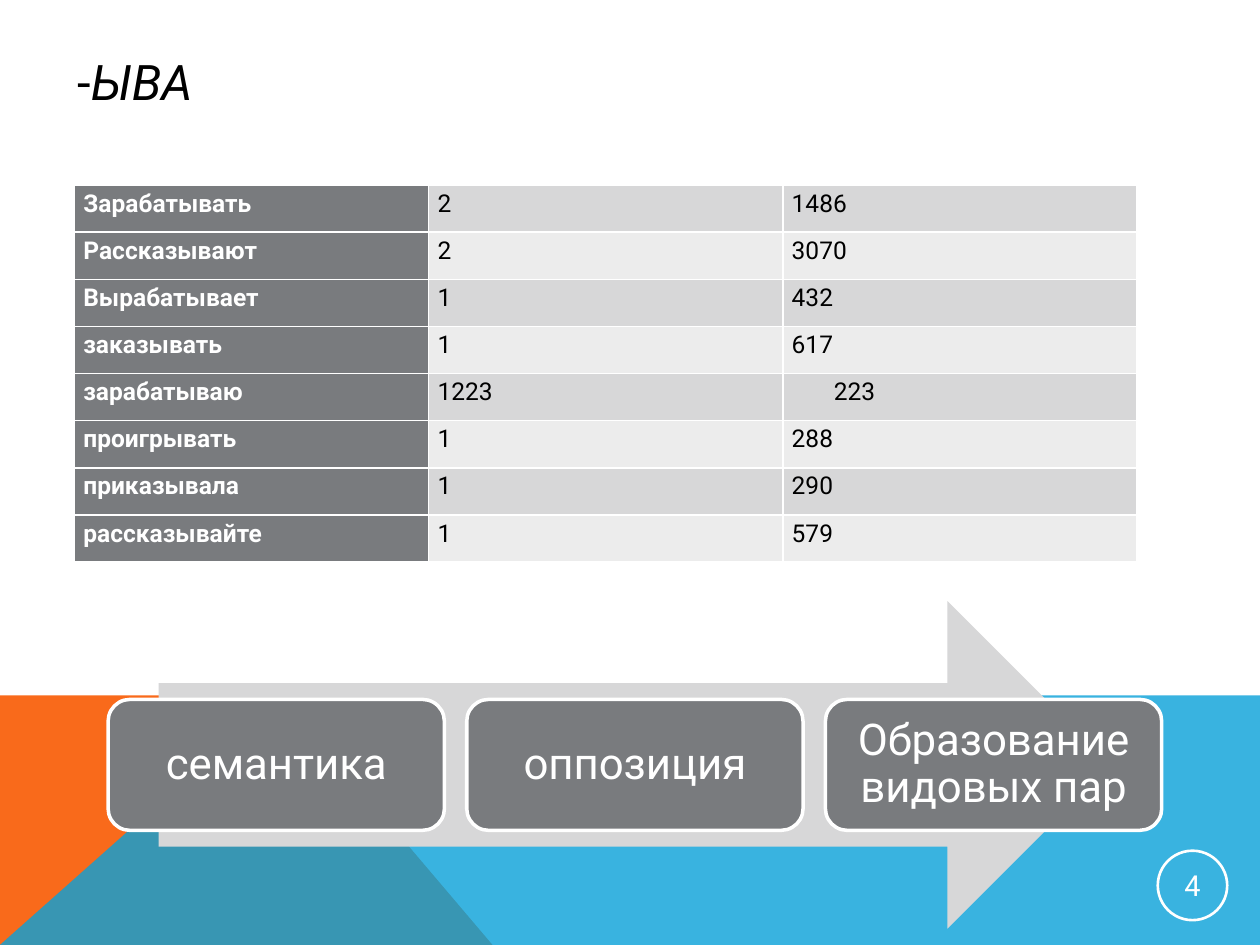
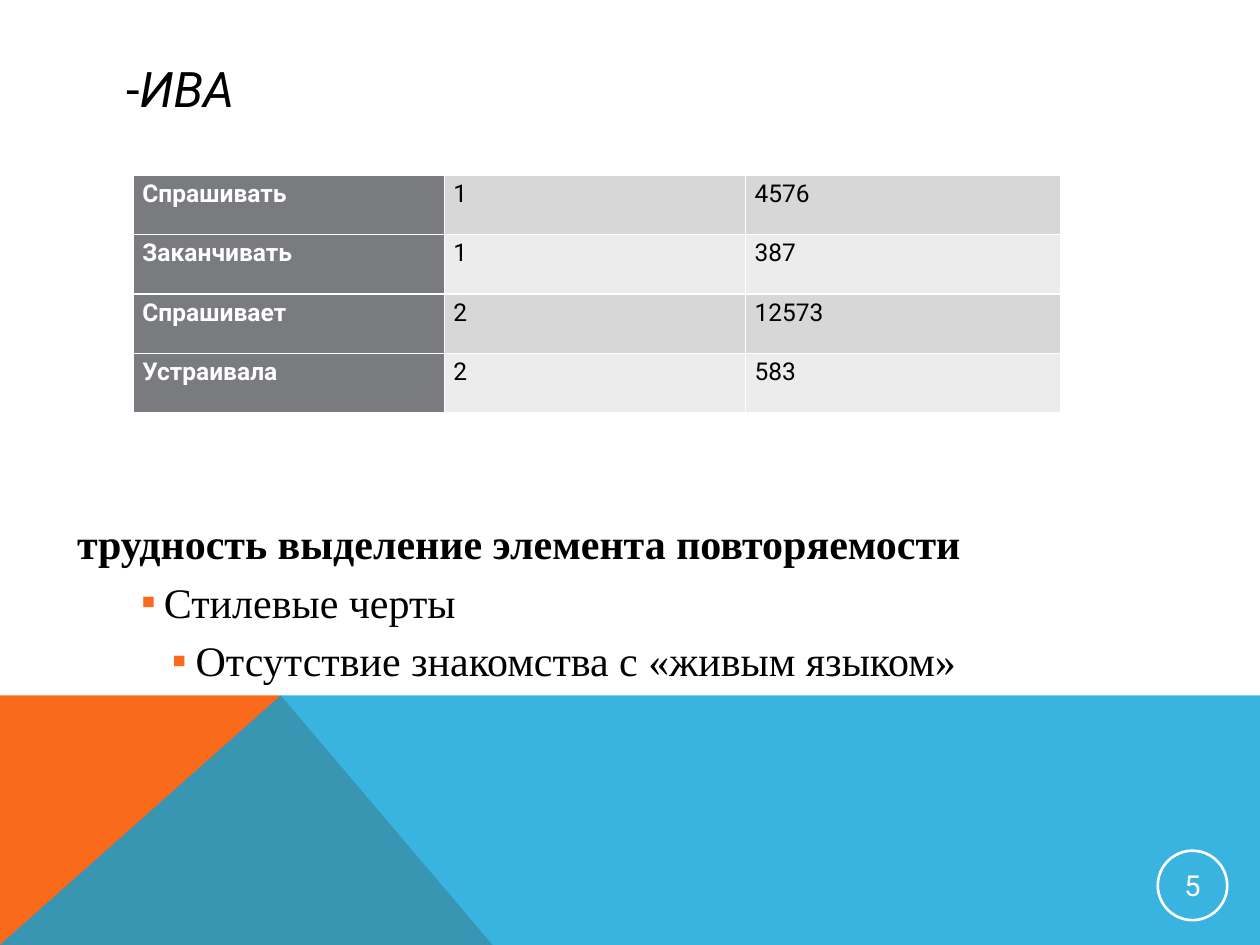
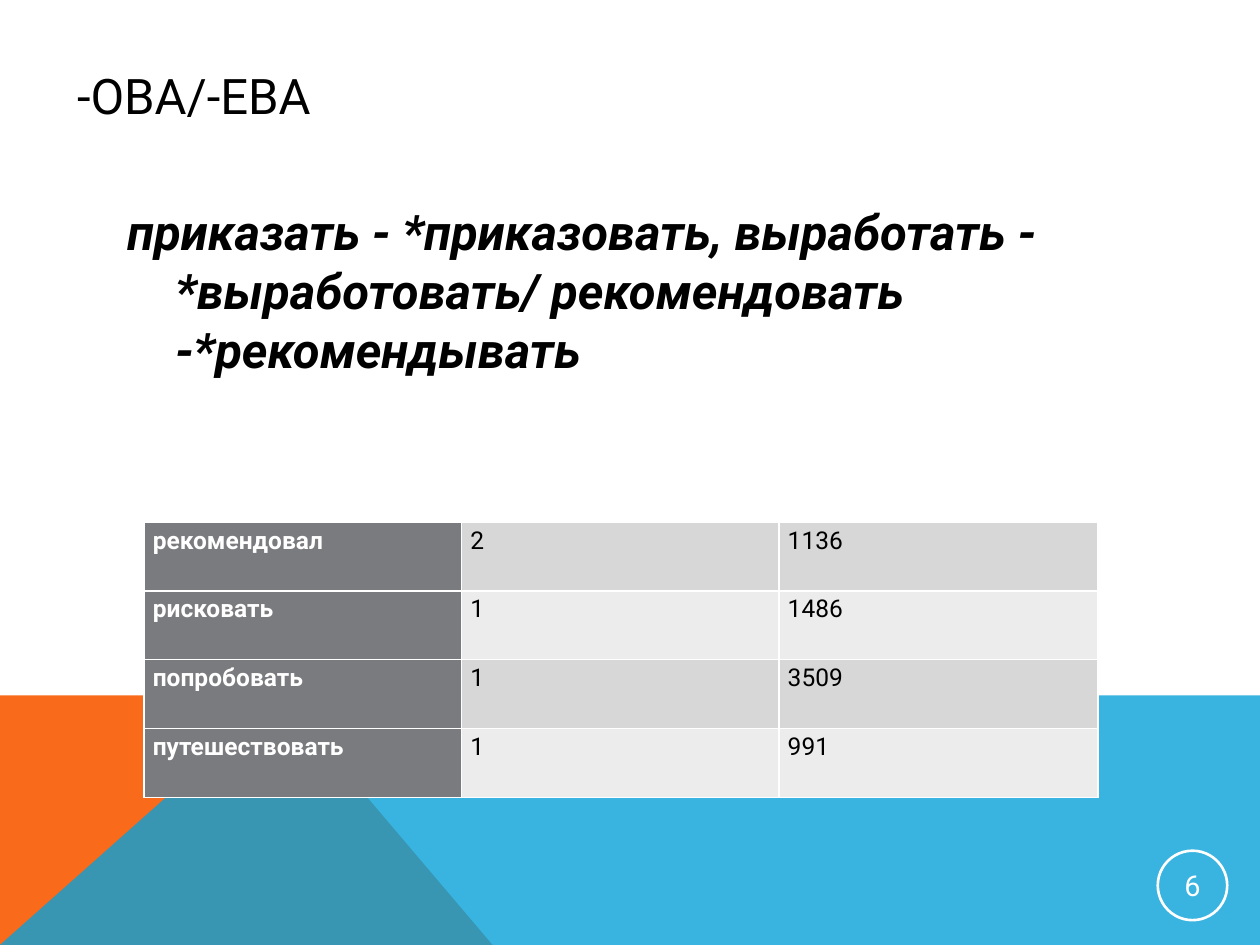
from lxml.etree import SubElement
from pptx import Presentation
from pptx.dml.color import RGBColor
from pptx.enum.shapes import MSO_SHAPE
from pptx.enum.text import MSO_ANCHOR, MSO_AUTO_SIZE, PP_ALIGN
from pptx.oxml.ns import qn
from pptx.util import Cm, Pt

WIDTH, HEIGHT = 25.4, 19.05
BAND_TOP = 14.02
BLACK, WHITE = "000000", "FFFFFF"
ORANGE, BLUE = "F96A1B", "08A1D9"
DARK_GREY, MID_GREY, PALE_GREY = "797B7E", "D7D7D8", "ECECEC"
SANS, SERIF = "Roboto", "Times New Roman"


def colour(value):
    return RGBColor.from_string(value)


def paint(shape, fill=None, line=None, line_width=1):
    shape.shadow.inherit = False
    if fill:
        shape.fill.solid()
        shape.fill.fore_color.rgb = colour(fill)
    else:
        shape.fill.background()
    if line:
        shape.line.color.rgb = colour(line)
        shape.line.width = Pt(line_width)
    else:
        shape.line.fill.background()


def add_run(paragraph, text, size, ink=BLACK, font=SANS, bold=False, italic=False):
    run = paragraph.add_run()
    run.text = text
    run.font.name = font
    run.font.size = Pt(size)
    run.font.bold = bold
    run.font.italic = italic
    run.font.color.rgb = colour(ink)


def place(shape, box):
    shape.left, shape.top, shape.width, shape.height = map(Cm, box)


def add_preset(slide, kind, box, **look):
    shape = slide.shapes.add_shape(kind, *map(Cm, box))
    paint(shape, **look)
    return shape


def write_centred(shape, text, size, margin, line_spacing=1.0):
    frame = shape.text_frame
    frame.word_wrap = True
    frame.vertical_anchor = MSO_ANCHOR.MIDDLE
    frame.margin_left = frame.margin_right = Cm(margin)
    frame.margin_top = frame.margin_bottom = Cm(margin)
    paragraph = frame.paragraphs[0]
    paragraph.alignment = PP_ALIGN.CENTER
    paragraph.line_spacing = line_spacing
    add_run(paragraph, text, size, WHITE)


def add_band_part(slide, points, fill):
    corners = [(Cm(x), Cm(y)) for x, y in points]
    builder = slide.shapes.build_freeform(*corners[0])
    builder.add_line_segments(corners[1:], close=True)
    shape = builder.convert_to_shape()
    paint(shape, fill)
    return shape


def add_master_band(presentation, slide):
    peak = (5.66, BAND_TOP)
    orange = add_band_part(
        slide, [(0, HEIGHT), (0, BAND_TOP), peak, (9.93, HEIGHT)], ORANGE)
    blue = add_band_part(
        slide, [(0, HEIGHT), peak, (WIDTH, BAND_TOP), (WIDTH, HEIGHT)], BLUE)
    SubElement(blue.element.find(".//" + qn("a:srgbClr")), qn("a:alpha"), val="80000")
    master_tree = presentation.slide_master.shapes.element
    for position, part in enumerate((orange, blue), start=2):
        master_tree.insert(position, part.element)


def fill_title(slide, box, *runs):
    title = slide.shapes.title
    place(title, box)
    frame = title.text_frame
    frame.auto_size = MSO_AUTO_SIZE.NONE
    frame.vertical_anchor = MSO_ANCHOR.MIDDLE
    paragraph = frame.paragraphs[0]
    paragraph.alignment = PP_ALIGN.LEFT
    for text, italic in runs:
        add_run(paragraph, text, 28, italic=italic)


def format_item(paragraph, level, left, hanging, space_before, bulleted):
    paragraph.level = level
    paragraph.space_before = Pt(space_before)
    properties = paragraph._p.get_or_add_pPr()
    properties.set("marL", str(Cm(left)))
    properties.set("indent", str(-Cm(hanging)))
    if bulleted:
        bullet_colour = SubElement(properties, qn("a:buClr"))
        SubElement(bullet_colour, qn("a:srgbClr"), val=ORANGE)
        SubElement(properties, qn("a:buChar"), char="▪")
    else:
        SubElement(properties, qn("a:buNone"))


def prepare_body(slide, box):
    body = slide.placeholders[1]
    place(body, box)
    frame = body.text_frame
    frame.auto_size = MSO_AUTO_SIZE.NONE
    frame.vertical_anchor = MSO_ANCHOR.TOP
    return frame


def add_borders(cell):
    properties = cell._tc.get_or_add_tcPr()
    for side in ("a:lnL", "a:lnR", "a:lnT", "a:lnB"):
        line = SubElement(properties, qn(side), w=str(Pt(1)))
        fill = SubElement(line, qn("a:solidFill"))
        SubElement(fill, qn("a:srgbClr"), val=WHITE)


def add_word_table(slide, left, top, column_widths, row_height, rows):
    table = slide.shapes.add_table(
        len(rows), len(column_widths), Cm(left), Cm(top),
        Cm(sum(column_widths)), Cm(row_height * len(rows))).table
    table.first_row = table.horz_banding = False
    table.first_col = True
    for column, width in zip(table.columns, column_widths):
        column.width = Cm(width)
    for row_index, values in enumerate(rows):
        table.rows[row_index].height = Cm(row_height)
        for column_index, value in enumerate(values):
            is_word = column_index == 0
            band = PALE_GREY if row_index % 2 else MID_GREY
            cell = table.cell(row_index, column_index)
            add_borders(cell)
            cell.fill.solid()
            cell.fill.fore_color.rgb = colour(DARK_GREY if is_word else band)
            cell.margin_left = cell.margin_right = Cm(0.18)
            cell.margin_top = cell.margin_bottom = 0
            paragraph = cell.text_frame.paragraphs[0]
            paragraph.alignment = PP_ALIGN.JUSTIFY
            paragraph.line_spacing = 1.15
            add_run(paragraph, value, 14, WHITE if is_word else BLACK, bold=is_word)
    return table


def add_process(slide, box, steps):
    left, top, width, height = box
    inset, gap = 1.02, 0.45
    add_preset(slide, MSO_SHAPE.RIGHT_ARROW,
               (left + inset, top, width - 2 * inset, height), fill=MID_GREY)
    card_width = (width - gap * (len(steps) - 1)) / len(steps)
    for index, step in enumerate(steps):
        card = add_preset(
            slide, MSO_SHAPE.ROUNDED_RECTANGLE,
            (left + index * (card_width + gap), top + 0.3 * height,
             card_width, 0.4 * height),
            fill=DARK_GREY, line=WHITE, line_width=2)
        write_centred(card, step, 25, 0.25, 0.9)


def add_page_badge(slide, number):
    badge = add_preset(slide, MSO_SHAPE.OVAL, (23.34, 17.15, 1.4, 1.4),
                       line=WHITE, line_width=1.5)
    write_centred(badge, str(number), 16.5, 0.03)


def build_yva_slide(slide):
    fill_title(slide, (1.3, 0.05, 22.86, 3.18), ("-", False), ("ЫВА", True))
    add_process(slide, (2.18, 12.12, 21.24, 6.6),
                ("семантика", "оппозиция", "Образование видовых пар"))
    table = add_word_table(slide, 1.5, 3.73, (7.14, 7.14, 7.14), 0.95, (
        ("Зарабатывать", "2", "1486"),
        ("Рассказывают", "2", "3070"),
        ("Вырабатывает", "1", "432"),
        ("заказывать", "1", "617"),
        ("зарабатываю", "1223", "223"),
        ("проигрывать", "1", "288"),
        ("приказывала", "1", "290"),
        ("рассказывайте", "1", "579"),
    ))
    table.cell(4, 2).margin_left = Cm(1.03)


def build_iva_slide(slide):
    fill_title(slide, (2.29, 1.02, 20.88, 1.52), ("-", False), ("ИВА", True))
    frame = prepare_body(slide, (1.3, 10.31, 23.6, 8.2))
    items = (
        ("трудность выделение элемента повторяемости", 0, 0.97, 0.97, 8),
        ("Стилевые черты", 3, 1.75, 0.46, 4.5),
        ("Отсутствие знакомства с «живым языком»", 4, 2.39, 0.48, 4.5),
    )
    for index, (text, level, left, hanging, space) in enumerate(items):
        paragraph = frame.add_paragraph() if index else frame.paragraphs[0]
        format_item(paragraph, level, left, hanging, space, bulleted=level > 0)
        add_run(paragraph, text, 24, font=SERIF, bold=level == 0)
    add_word_table(slide, 2.69, 3.53, (6.27, 6.07, 6.35), 1.2, (
        ("Спрашивать", "1", "4576"),
        ("Заканчивать", "1", "387"),
        ("Спрашивает", "2", "12573"),
        ("Устраивала", "2", "583"),
    ))


def build_ova_slide(slide):
    fill_title(slide, (1.3, 0.33, 22.86, 3.18), ("-ОВА/-ЕВА", False))
    paragraph = prepare_body(slide, (2.31, 3.94, 20.88, 9.93)).paragraphs[0]
    format_item(paragraph, 0, 0.97, 0.97, 8, bulleted=False)
    add_run(paragraph,
            "приказать - *приказовать, выработать - *выработовать/ "
            "рекомендовать -*рекомендывать", 28, bold=True, italic=True)
    add_word_table(slide, 2.9, 10.52, (6.4, 6.4, 6.43), 1.39, (
        ("рекомендовал", "2", "1136"),
        ("рисковать", "1", "1486"),
        ("попробовать", "1", "3509"),
        ("путешествовать", "1", "991"),
    ))


def main():
    presentation = Presentation()
    presentation.slide_width, presentation.slide_height = Cm(WIDTH), Cm(HEIGHT)
    content, title_only = presentation.slide_layouts[1], presentation.slide_layouts[5]
    pages = ((title_only, build_yva_slide), (content, build_iva_slide),
             (content, build_ova_slide))
    for number, (layout, build) in enumerate(pages, start=4):
        slide = presentation.slides.add_slide(layout)
        build(slide)
        add_page_badge(slide, number)
    add_master_band(presentation, presentation.slides[0])
    presentation.save("out.pptx")


if __name__ == "__main__":
    main()
